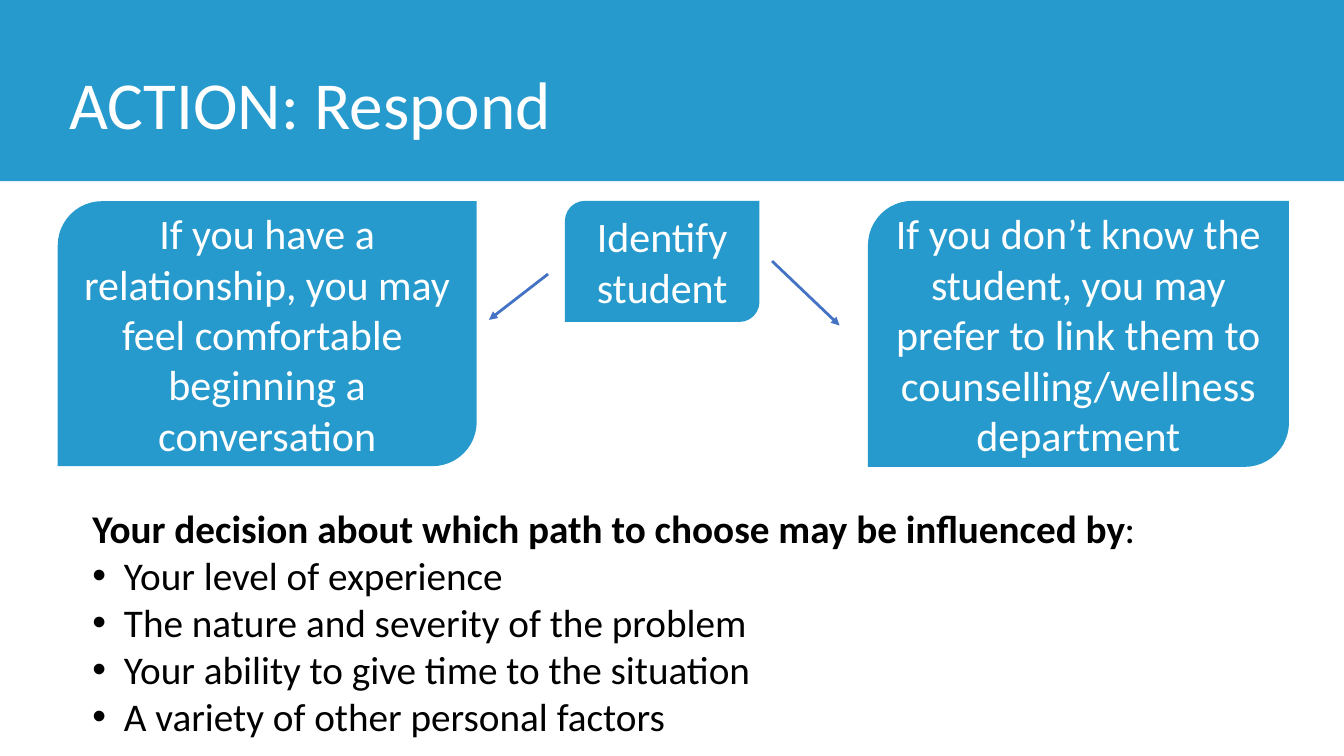
from lxml import etree
from pptx import Presentation
from pptx.dml.color import RGBColor
from pptx.enum.shapes import MSO_CONNECTOR, MSO_SHAPE
from pptx.enum.text import MSO_ANCHOR, PP_ALIGN
from pptx.oxml.ns import qn
from pptx.util import Pt

RECTANGLE = MSO_SHAPE.RECTANGLE
DIAGONAL_ROUND = MSO_SHAPE.ROUND_2_DIAG_RECTANGLE
STRAIGHT = MSO_CONNECTOR.STRAIGHT
MIDDLE = MSO_ANCHOR.MIDDLE
CENTER = PP_ALIGN.CENTER

BLUE = "279ACD"
ARROW_BLUE = "4472C4"
WHITE = "FFFFFF"
BLACK = "000000"


def color(value):
    """Turn a hex string into a colour."""
    return RGBColor.from_string(value)


class ActionSlide:
    """Draws the elements of one slide in a shared style."""

    font_name = "Calibri"

    def __init__(self, slide):
        """Keep the slide to draw on."""
        self.shapes = slide.shapes

    def style(self, paragraph, size, fill):
        """Format every run of a paragraph."""
        for run in paragraph.runs:
            run.font.name = self.font_name
            run.font.size = Pt(size)
            run.font.color.rgb = color(fill)

    def block(self, kind, left, top, width, height):
        """Add a plain blue shape."""
        block = self.shapes.add_shape(kind, Pt(left), Pt(top), Pt(width), Pt(height))
        block.shadow.inherit = False
        block.fill.solid()
        block.fill.fore_color.rgb = color(BLUE)
        block.line.fill.background()
        return block

    def step(self, text, left, top, width, height):
        """Add a step with centred white text."""
        frame = self.block(DIAGONAL_ROUND, left, top, width, height).text_frame
        frame.word_wrap = True
        frame.vertical_anchor = MIDDLE
        frame.text = text
        frame.paragraphs[0].alignment = CENTER
        self.style(frame.paragraphs[0], 30, WHITE)

    def arrow(self, x1, y1, x2, y2):
        """Add a straight arrow pointing at its second end."""
        arrow = self.shapes.add_connector(STRAIGHT, Pt(x1), Pt(y1), Pt(x2), Pt(y2))
        arrow.line.color.rgb = color(ARROW_BLUE)
        arrow.line.width = Pt(2)
        line = arrow.line._get_or_add_ln()
        etree.SubElement(line, qn("a:tailEnd"), type="triangle")
        etree.SubElement(arrow._element.spPr, qn("a:effectLst"))

    def text_frame(self, left, top, width, height):
        """Add a wrapping text box and return its frame."""
        box = self.shapes.add_textbox(Pt(left), Pt(top), Pt(width), Pt(height))
        box.text_frame.word_wrap = True
        return box.text_frame

    def title(self, text, left, top, width, height):
        """Add the slide title."""
        frame = self.text_frame(left, top, width, height)
        frame.vertical_anchor = MIDDLE
        frame.text = text
        frame.paragraphs[0].line_spacing = 0.9
        self.style(frame.paragraphs[0], 48, WHITE)

    def factors(self, lead, items, left, top, width, height):
        """Add a bold lead-in with a colon and a bulleted list."""
        frame = self.text_frame(left, top, width, height)
        heading = frame.paragraphs[0]
        for text, bold in ((lead, True), (":", False)):
            run = heading.add_run()
            run.text = text
            run.font.bold = bold
        self.style(heading, 28, BLACK)
        for item in items:
            paragraph = frame.add_paragraph()
            paragraph.text = item
            properties = paragraph._p.get_or_add_pPr()
            properties.set("marL", str(Pt(22.5)))
            properties.set("indent", str(Pt(-22.5)))
            etree.SubElement(properties, qn("a:buFont"), typeface="Arial")
            etree.SubElement(properties, qn("a:buChar"), char="•")
            self.style(paragraph, 28, BLACK)


def main():
    """Build and save the slide."""
    deck = Presentation()
    deck.slide_width, deck.slide_height = Pt(960), Pt(540)
    action = ActionSlide(deck.slides.add_slide(deck.slide_layouts[6]))

    action.block(RECTANGLE, 0, 0, 960, 129.5)
    action.title("ACTION: Respond", 42.5, 26.5, 850, 101)

    action.step("Identify student", 403.5, 143.5, 139, 86.5)
    action.step("If you have a relationship, you may feel comfortable  beginning a conversation",
                41.25, 143.75, 299.25, 189.25)
    action.step("If you don’t know the student, you may prefer to link them to "
                "counselling/wellness department", 620, 143.5, 300.75, 190)
    action.arrow(391.5, 195.75, 349.25, 228.5)
    action.arrow(551.5, 186.5, 599.75, 232.5)

    action.factors(
        "Your decision about which path to choose may be influenced by",
        ("Your level of experience",
         "The nature and severity of the problem",
         "Your ability to give time to the situation",
         "A variety of other personal factors"),
        59, 356.5, 842.5, 177)
    deck.save("out.pptx")


if __name__ == "__main__":
    main()
